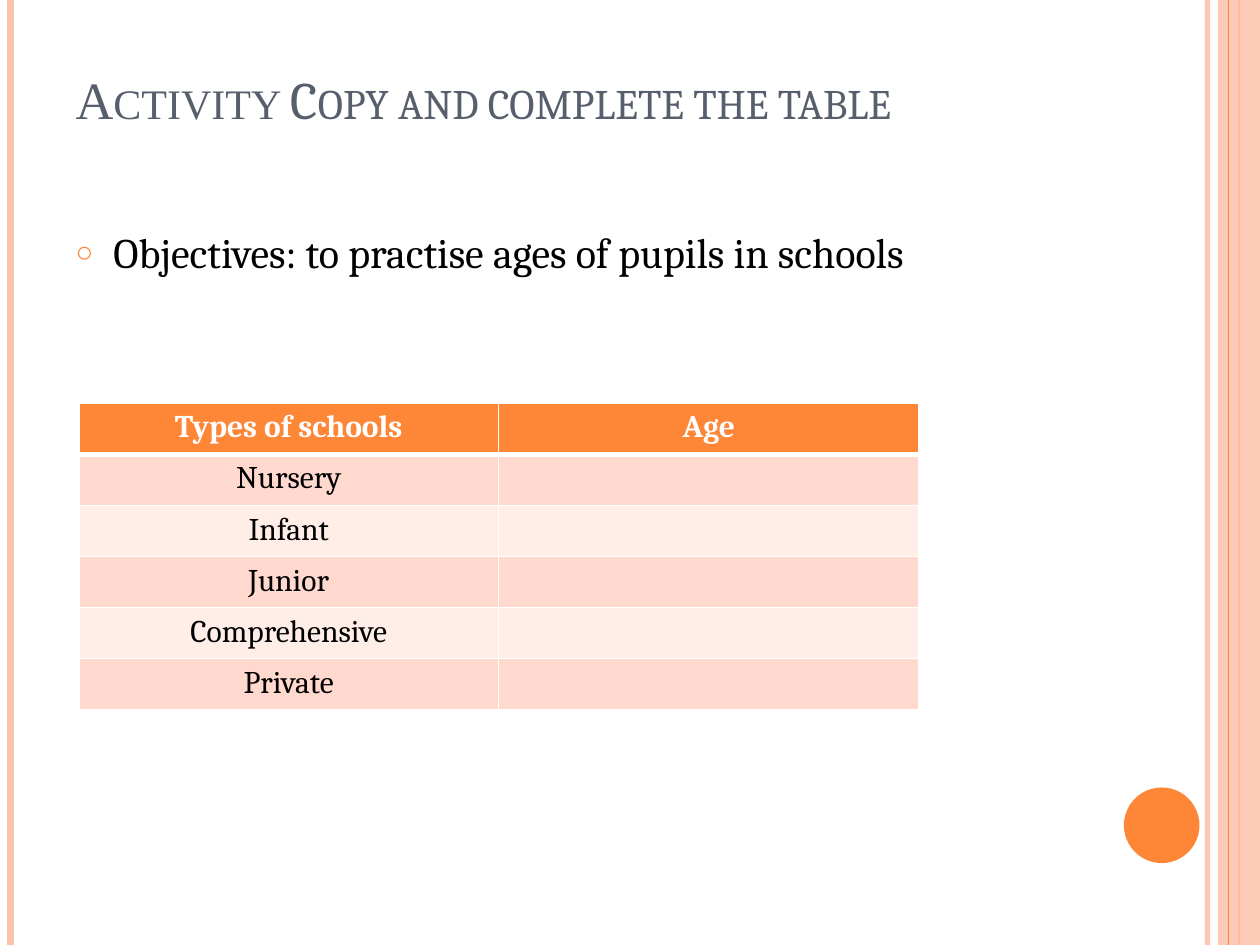
from lxml.etree import SubElement
from pptx import Presentation
from pptx.dml.color import RGBColor
from pptx.enum.shapes import MSO_CONNECTOR as Connector, MSO_SHAPE as Shape
from pptx.enum.text import MSO_ANCHOR as Anchor, PP_ALIGN as Align
from pptx.oxml.ns import qn
from pptx.util import Pt

ORANGE = RGBColor(0xFE, 0x86, 0x37)
PEACH = RGBColor(0xFE, 0xC3, 0xAE)
BAND_DARK = RGBColor(0xFF, 0xD9, 0xCE)
BAND_LIGHT = RGBColor(0xFF, 0xED, 0xE8)
SLATE = RGBColor(0x57, 0x5F, 0x6D)
BLACK = RGBColor(0, 0, 0)
WHITE = RGBColor(0xFF, 0xFF, 0xFF)

SERIF = "Cambria"
WIDTH, HEIGHT = Pt(720), Pt(540)
HEADERS = ("Types of schools", "Age")
SCHOOLS = ("Nursery", "Infant", "Junior", "Comprehensive", "Private")


def place(shape, box):
    shape.left, shape.top, shape.width, shape.height = box


def add_run(paragraph, text, size, color, font=SERIF, bold=False):
    run = paragraph.add_run()
    run.text = text
    run.font.name = font
    run.font.size = Pt(size)
    run.font.bold = bold
    run.font.color.rgb = color
    return run


def set_opacity(parent, percent):
    color = next(parent.iter(qn("a:srgbClr")))
    SubElement(color, qn("a:alpha"), val=str(percent * 1000))


def add_stripe(slide, x, weight, color, opacity=100):
    stripe = slide.shapes.add_connector(Connector.STRAIGHT, Pt(x), 0, Pt(x), HEIGHT)
    stripe.line.color.rgb = color
    stripe.line.width = Pt(weight)
    if opacity < 100:
        set_opacity(stripe.line._get_or_add_ln(), opacity)
    SubElement(stripe._element.spPr, qn("a:effectLst"))


def add_solid(slide, kind, box, color):
    shape = slide.shapes.add_shape(kind, *box)
    shape.shadow.inherit = False
    shape.fill.solid()
    shape.fill.fore_color.rgb = color
    shape.line.fill.background()
    return shape


def add_side_decoration(slide):
    add_stripe(slide, 690, 3, PEACH, 93)
    add_stripe(slide, 6, 4.5, PEACH)
    add_stripe(slide, 708, 1.5, ORANGE)
    band = add_solid(slide, Shape.RECTANGLE, (Pt(696), 0, Pt(24), HEIGHT), PEACH)
    set_opacity(band._element.spPr, 87)
    add_stripe(slide, 702, 0.75, ORANGE)
    add_solid(slide, Shape.OVAL, (Pt(642.24), Pt(450), Pt(43.2), Pt(43.2)), ORANGE)


def fill_title(slide, box):
    title = slide.shapes.title
    place(title, box)
    frame = title.text_frame
    frame.vertical_anchor = Anchor.BOTTOM
    frame.margin_bottom = Pt(37)
    paragraph = frame.paragraphs[0]
    paragraph.alignment = Align.LEFT
    for text, font in (("Activity", "Times New Roman"),
                       (" Copy and complete the table", SERIF)):
        run = add_run(paragraph, text, 30, SLATE, font)
        run.font._element.set("cap", "small")


def fill_objectives(slide, box):
    body = slide.placeholders[1]
    place(body, box)
    paragraph = body.text_frame.paragraphs[0]
    paragraph.space_before = Pt(6)
    add_run(paragraph, "Objectives: to practise ages of pupils in schools", 24, BLACK)
    properties = paragraph._p.get_or_add_pPr()
    indent = Pt(21.6)
    properties.set("marL", str(indent))
    properties.set("indent", str(-indent))
    bullet_color = SubElement(properties, qn("a:buClr"))
    SubElement(bullet_color, qn("a:srgbClr"), val=str(ORANGE))
    SubElement(properties, qn("a:buSzPct"), val="70000")
    SubElement(properties, qn("a:buChar"), char="○")


def set_borders(cell, top, bottom):
    properties = cell._tc.get_or_add_tcPr()
    for side, weight in (("L", 1), ("R", 1), ("T", top), ("B", bottom)):
        line = SubElement(properties, qn(f"a:ln{side}"), w=str(Pt(weight)))
        fill = SubElement(line, qn("a:solidFill"))
        SubElement(fill, qn("a:srgbClr"), val=str(WHITE))


def add_school_table(slide, box):
    rows = [HEADERS] + [(school, "") for school in SCHOOLS]
    table = slide.shapes.add_table(len(rows), len(HEADERS), *box).table
    table.horz_banding = False
    table.first_row = False
    for row_index, row in enumerate(rows):
        is_header = row_index == 0
        band = BAND_DARK if row_index % 2 else BAND_LIGHT
        for column_index, text in enumerate(row):
            cell = table.cell(row_index, column_index)
            set_borders(cell, 3 if row_index == 1 else 1, 3 if is_header else 1)
            cell.fill.solid()
            cell.fill.fore_color.rgb = ORANGE if is_header else band
            paragraph = cell.text_frame.paragraphs[0]
            paragraph.alignment = Align.CENTER
            if text:
                add_run(paragraph, text, 18, WHITE if is_header else BLACK, bold=is_header)


def main():
    presentation = Presentation()
    presentation.slide_width, presentation.slide_height = WIDTH, HEIGHT
    slide = presentation.slides.add_slide(presentation.slide_layouts[1])
    add_side_decoration(slide)
    fill_title(slide, (Pt(36), Pt(21.6), Pt(588), Pt(90)))
    fill_objectives(slide, (Pt(36), Pt(126), Pt(588), Pt(384)))
    add_school_table(slide, (Pt(45), Pt(230.4), Pt(480), Pt(175.2)))
    presentation.save("out.pptx")


if __name__ == "__main__":
    main()
